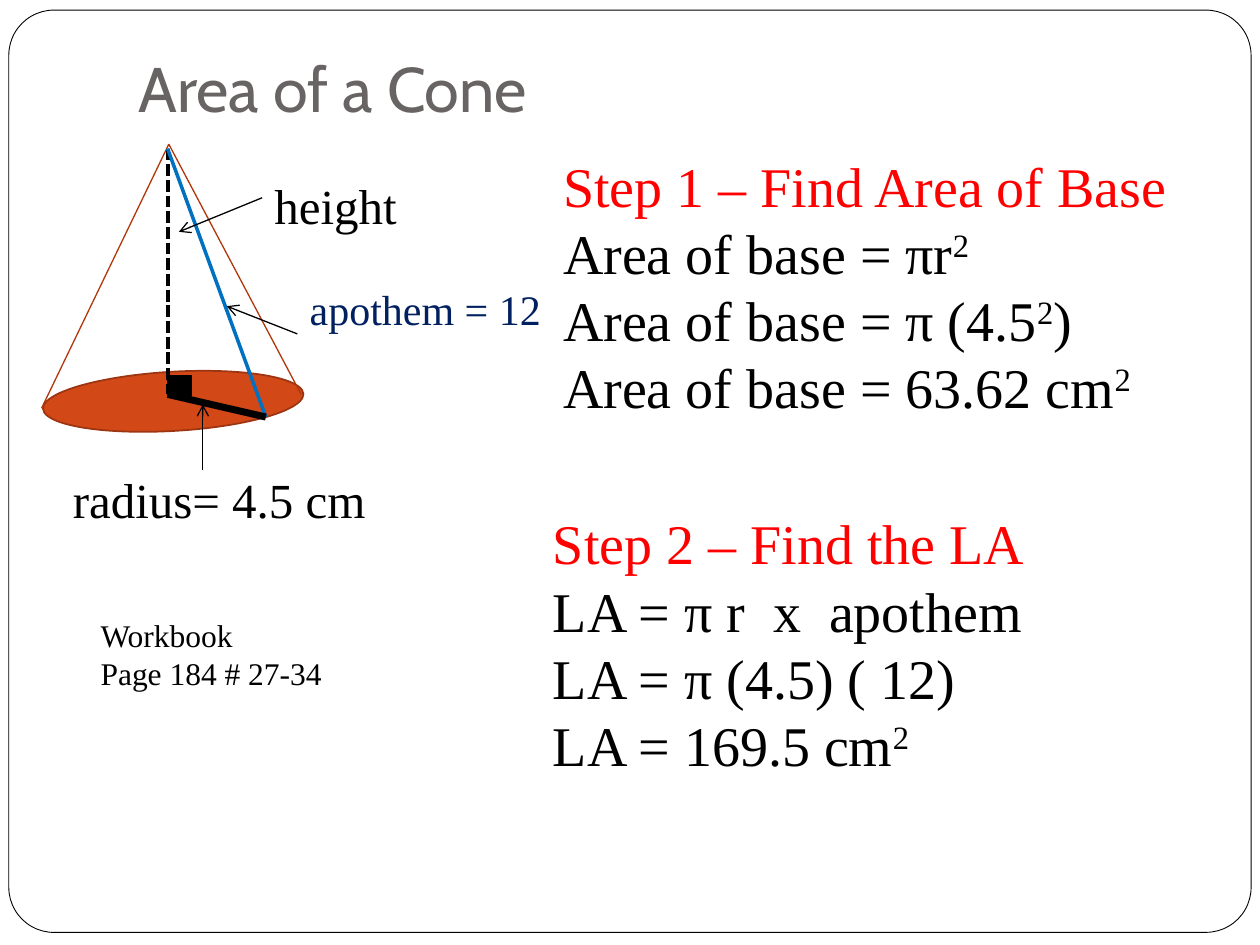
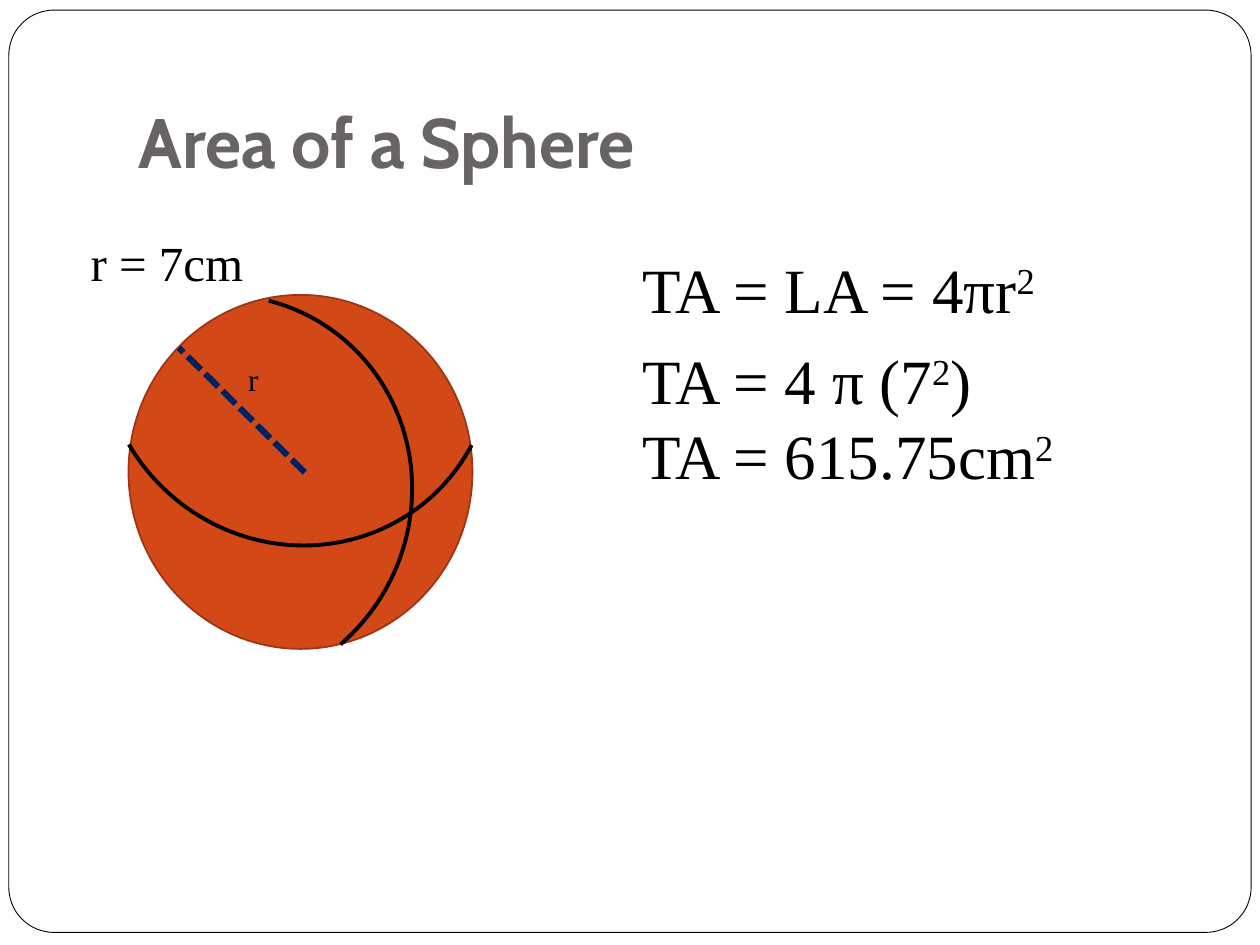
from dataclasses import dataclass

from lxml.etree import SubElement
from pptx import Presentation
from pptx.dml.color import RGBColor
from pptx.enum.dml import MSO_LINE
from pptx.enum.shapes import MSO_CONNECTOR, MSO_SHAPE
from pptx.enum.text import MSO_ANCHOR
from pptx.oxml.ns import qn
from pptx.shapes.autoshape import Shape
from pptx.slide import Slide
from pptx.util import Pt

BLACK, WHITE, GREY, RED = "000000", "FFFFFF", "696464", "FF0000"
ORANGE, RUST, EDGE = "D34817", "9C3511", "B1360B"
BLUE, NAVY = "0070C0", "002060"
TITLE_FONT, BODY_FONT = "Cabin", "Times New Roman"

Point = tuple[float, float]
Box = tuple[float, float, float, float]


@dataclass
class Label:
    box: Box
    lines: list[str]
    size: int
    color: str = BLACK
    head: str = ""


@dataclass
class Stroke:
    start: Point
    end: Point
    color: str = BLACK
    width: float = 0.75
    dashed: bool = False
    arrow: bool = False


@dataclass
class Arc:
    box: Box
    rotation: float
    adjustments: tuple[float, float]


APEX, CENTER, RIM = (95.76, 84.96), (95.76, 225.36), (151.92, 238.32)
CONE_TIP = (96.48, 82.4)
ARC_SIZE = (221.76, 228.96)

CONE_STROKES = [
    Stroke((172.08, 225.36), CONE_TIP, EDGE),
    Stroke((23.76, 233.28), CONE_TIP, EDGE),
    Stroke(APEX, CENTER, width=2.25, dashed=True),
    Stroke(APEX, RIM, BLUE, 2),
    Stroke(CENTER, RIM, width=4),
    Stroke((149.76, 113.04), (102.24, 132.48), arrow=True),
    Stroke((169.92, 190.8), (129.6, 174.96), arrow=True),
    Stroke((115.92, 268.56), (115.92, 231.12), arrow=True),
]
CONE_LABELS = [
    Label((149.76, 96.48, 155.52, 41.04), ["height"], 28),
    Label((169.92, 158.4, 155.52, 65.52), ["apothem = 12"], 24, NAVY),
    Label((34.56, 264.96, 182.88, 41.04), ["radius= 4.5 cm"], 28),
    Label((314.64, 82.8, 366.48, 184.32),
          ["Step 1 – Find Area of Base", "Area of base = πr²",
           "Area of base = π (4.5²)", "Area of base = 63.62 cm²"], 32, head=RED),
    Label((308.88, 287.28, 326.16, 162.72),
          ["Step 2 – Find the LA", "LA = π r  x  apothem",
           "LA = π (4.5) ( 12)", "LA = 169.5 cm²"], 32, head=RED),
    Label((50.4, 348.48, 247.68, 51.12), ["Workbook", "Page 184 # 27-34"], 18),
]

BALL_ARCS = [
    Arc((59.04, 84.24, *ARC_SIZE), 139.2, (149.98, 6.57)),
    Arc((12.96, 167.76, *ARC_SIZE), 28, (154.26, 13.52)),
]
BALL_RADIUS = Stroke((174.24, 270), (102.24, 198.72), NAVY, 3.5, dashed=True)
BALL_LABELS = [
    Label((360, 139.68, 292.32, 65.52), ["TA = LA = 4πr²"], 36),
    Label((44.64, 129.6, 106.56, 41.04), ["r = 7cm"], 28),
    Label((134.64, 202.32, 49.68, 28.8), ["r"], 18),
    Label((360, 191.52, 306, 94.32), ["TA = 4 π (7²)", "TA = 615.75cm²"], 36),
]


def rgb(color: str) -> RGBColor:
    return RGBColor.from_string(color)


def add_run(p, text: str, *, size: float, color: str, font: str = BODY_FONT,
            bold: bool = False, raised: bool = False) -> None:
    r = p.add_run()
    r.text = text
    r.font.size = Pt(size)
    r.font.name = font
    r.font.bold = bold
    r.font.color.rgb = rgb(color)
    if raised:
        r._r.get_or_add_rPr().set("baseline", "30000")


def add_text(s: Slide, box: Box, lines: list[str], *, color: str = BLACK,
             head: str = "", anchor: MSO_ANCHOR = MSO_ANCHOR.TOP, **fmt) -> Shape:
    sp = s.shapes.add_textbox(*map(Pt, box))
    tf = sp.text_frame
    tf.word_wrap = True
    tf.vertical_anchor = anchor
    for i, line in enumerate(lines):
        p = tf.paragraphs[0] if i == 0 else tf.add_paragraph()
        line_color = head if head and i == 0 else color
        for j, part in enumerate(line.split("²")):
            if j:
                add_run(p, "2", color=line_color, raised=True, **fmt)
            if part:
                add_run(p, part, color=line_color, **fmt)
    return sp


def add_labels(s: Slide, labels: list[Label]) -> None:
    for label in labels:
        add_text(s, label.box, label.lines, size=label.size,
                 color=label.color, head=label.head)


def add_figure(s: Slide, kind: MSO_SHAPE, box: Box, *, fill: str = "",
               line: str = BLACK, width: float = 1, rotation: float = 0,
               adjustments: tuple[float, ...] = ()) -> Shape:
    sp = s.shapes.add_shape(kind, *map(Pt, box))
    sp.shadow.inherit = False
    sp.rotation = rotation
    for i, value in enumerate(adjustments):
        sp.adjustments[i] = value
    if fill:
        sp.fill.solid()
        sp.fill.fore_color.rgb = rgb(fill)
    else:
        sp.fill.background()
    sp.line.color.rgb = rgb(line)
    sp.line.width = Pt(width)
    return sp


def add_stroke(s: Slide, stroke: Stroke) -> None:
    c = s.shapes.add_connector(MSO_CONNECTOR.STRAIGHT,
                               *map(Pt, stroke.start + stroke.end))
    c.line.color.rgb = rgb(stroke.color)
    c.line.width = Pt(stroke.width)
    if stroke.dashed:
        c.line.dash_style = MSO_LINE.SQUARE_DOT
    if stroke.arrow:
        SubElement(c.line._get_or_add_ln(), qn("a:tailEnd"), type="arrow")
    SubElement(c._element.spPr, qn("a:effectLst"))


def add_slide(prs: Presentation, title: str, *, height: float, size: int,
              bold: bool = False) -> Slide:
    s = prs.slides.add_slide(prs.slide_layouts[6])
    add_figure(s, MSO_SHAPE.ROUNDED_RECTANGLE, (5.04, 5.76, 709.92, 527.04),
               fill=WHITE, width=0.5, adjustments=(0.049,))
    sp = add_text(s, (72, 21.6, 612, height), [title], size=size, color=GREY,
                  font=TITLE_FONT, bold=bold, anchor=MSO_ANCHOR.BOTTOM)
    sp.text_frame.margin_bottom = Pt(7.2)
    return s


def build_cone(prs: Presentation) -> None:
    s = add_slide(prs, "Area of a Cone", height=56.88, size=36)
    add_figure(s, MSO_SHAPE.OVAL, (24.48, 212.4, 149.04, 33.84),
               fill=ORANGE, line=RUST, rotation=176.7)
    for stroke in CONE_STROKES:
        add_stroke(s, stroke)
    add_figure(s, MSO_SHAPE.RECTANGLE, (95.76, 214.56, 13.68, 11.52), fill=BLACK)
    add_labels(s, CONE_LABELS)


def build_sphere(prs: Presentation) -> None:
    s = add_slide(prs, "Area of a Sphere", height=90, size=40, bold=True)
    add_figure(s, MSO_SHAPE.OVAL, (73.44, 168.48, 196.56, 202.32),
               fill=ORANGE, line=RUST)
    for arc in BALL_ARCS:
        add_figure(s, MSO_SHAPE.ARC, arc.box, width=2.25,
                   rotation=arc.rotation, adjustments=arc.adjustments)
    add_stroke(s, BALL_RADIUS)
    add_labels(s, BALL_LABELS)


def main() -> None:
    prs = Presentation()
    prs.slide_width, prs.slide_height = Pt(720), Pt(540)
    build_cone(prs)
    build_sphere(prs)
    prs.save("out.pptx")


if __name__ == "__main__":
    main()
